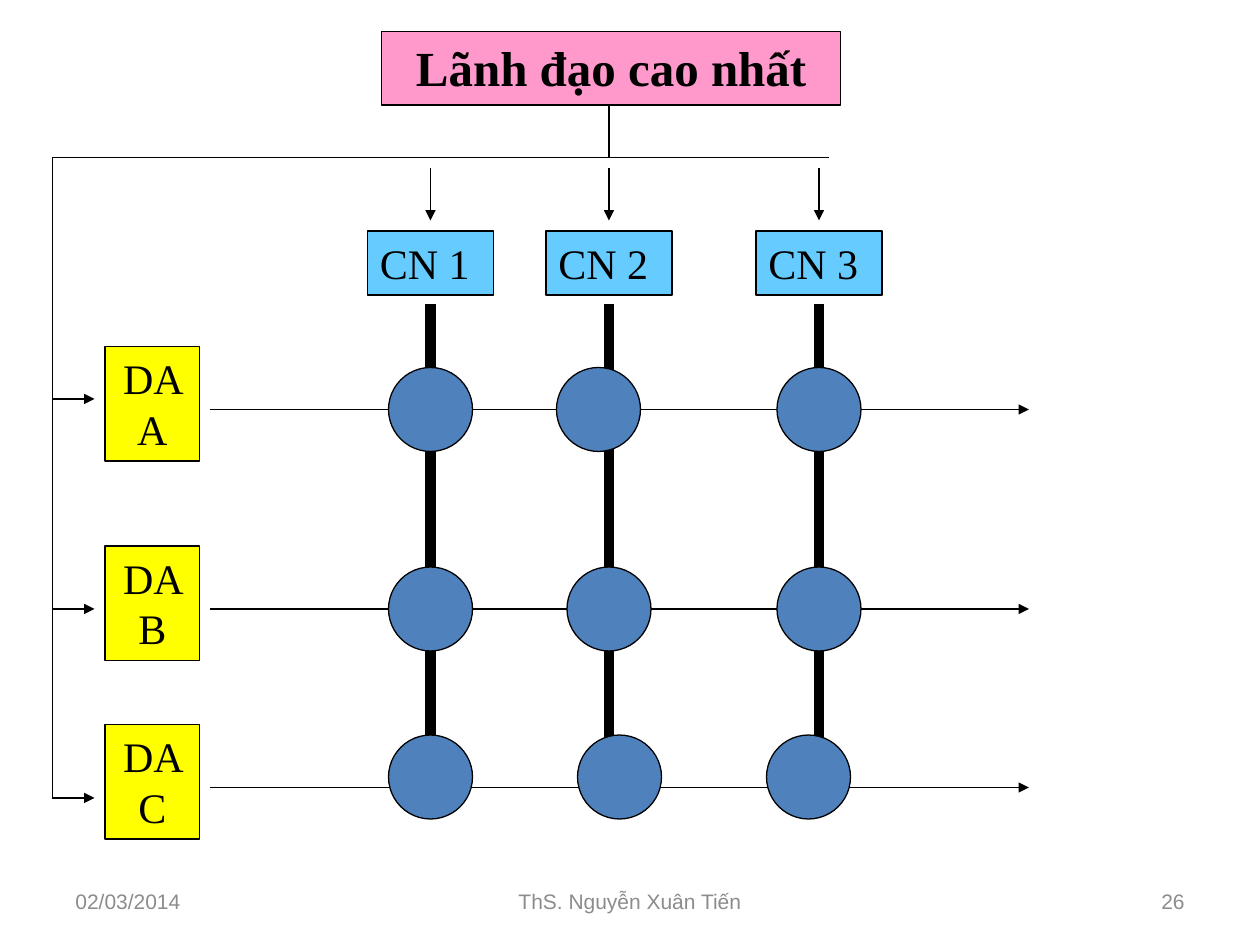
from dataclasses import dataclass

from lxml import etree
from pptx import Presentation, util as u
from pptx.dml.color import RGBColor
from pptx.enum import shapes, text
from pptx.oxml.ns import qn


@dataclass(frozen=True)
class Theme:
    ink: str = "000000"
    leader: str = "FF99CC"
    function: str = "66CCFF"
    project: str = "FFFF00"
    node: str = "4F81BD"
    muted: str = "8C8C8C"
    serif: str = "Times New Roman"
    sans: str = "Arial"
    title_size: int = 28
    label_size: int = 24
    footer_size: int = 12
    thin: float = 0.75
    thick: float = 6


THEME = Theme()
LEFT, CENTER, RIGHT = (text.PP_ALIGN.LEFT, text.PP_ALIGN.CENTER, text.PP_ALIGN.RIGHT)

# Places are in grid cells, twelve to the inch.
LEADER = "Lãnh đạo cao nhất"
FUNCTIONS = [("CN 1", 41), ("CN 2", 58), ("CN 3", 78)]  # label, column
PROJECTS = [  # label, row, branch row, node row, node shift in each column
    ("DA A", 39, 38, 39, (0, -1, 0)),
    ("DA B", 58, 58, 58, (0, 0, 0)),
    ("DA C", 75, 76, 74, (0, 1, -1)),
]
TRUNK = [(58, 10, 58, 15), (5, 15, 79, 15), (5, 15, 5, 76)]
FOOTERS = [  # text, left, width, alignment
    ("02/03/2014", 6, 28, LEFT),
    ("ThS. Nguyễn Xuân Tiến", 41, 38, CENTER),
    ("26", 86, 28, RIGHT),
]
NODE_SIZE = 8


def cells(*counts):
    return [u.Inches(count / 12) for count in counts]


def paint(shape, fill):
    shape.shadow.inherit = False
    shape.fill.solid()
    shape.fill.fore_color.rgb = RGBColor.from_string(fill)
    shape.line.color.rgb = RGBColor.from_string(THEME.ink)
    shape.line.width = u.Pt(THEME.thin)


def write(shape, words, size, align, font=THEME.serif, color=THEME.ink,
          bold=False, anchor=text.MSO_ANCHOR.TOP):
    frame = shape.text_frame
    frame.word_wrap = True
    frame.vertical_anchor = anchor
    paragraph = frame.paragraphs[0]
    paragraph.alignment = align
    run = paragraph.add_run()
    run.text = words
    run.font.name = font
    run.font.size = u.Pt(size)
    run.font.bold = bold
    run.font.color.rgb = RGBColor.from_string(color)


def add_label(slide, words, place, fill, align):
    label = slide.shapes.add_shape(shapes.MSO_SHAPE.RECTANGLE, *cells(*place))
    paint(label, fill)
    write(label, words, THEME.label_size, align)
    label.text_frame.auto_size = text.MSO_AUTO_SIZE.SHAPE_TO_FIT_TEXT


def add_line(slide, ends, width=THEME.thin, arrow=False):
    line = slide.shapes.add_connector(shapes.MSO_CONNECTOR.STRAIGHT, *cells(*ends))
    line.line.color.rgb = RGBColor.from_string(THEME.ink)
    line.line.width = u.Pt(width)
    if arrow:
        etree.SubElement(line.line._get_or_add_ln(), qn("a:tailEnd"), type="triangle")
    etree.SubElement(line._element.spPr, qn("a:effectLst"))


def add_leader(slide):
    leader = slide.shapes.title
    leader.left, leader.top, leader.width, leader.height = cells(36.35, 3, 43.7, 7)
    paint(leader, THEME.leader)
    write(leader, LEADER, THEME.title_size, CENTER, bold=True)
    leader.text_frame.auto_size = text.MSO_AUTO_SIZE.NONE


def add_matrix(slide):
    for name, column in FUNCTIONS:
        add_label(slide, name, (column - 6, 22, 12, 6.1), THEME.function, LEFT)
        add_line(slide, (column, 16, column, 21), arrow=True)
    for name, row, branch, _, _ in PROJECTS:
        add_label(slide, name, (10, row - 6, 9, 10.9), THEME.project, CENTER)
        add_line(slide, (5, branch, 9, branch), arrow=True)
        add_line(slide, (20, row, 98, row), arrow=True)
    for _, column in FUNCTIONS:
        add_line(slide, (column, 29, column, 75), width=THEME.thick)
    for _, _, _, node_row, shifts in PROJECTS:
        for (_, column), shift in zip(FUNCTIONS, shifts):
            corner = (column + shift - NODE_SIZE / 2, node_row - NODE_SIZE / 2)
            node = slide.shapes.add_shape(
                shapes.MSO_SHAPE.OVAL, *cells(*corner, NODE_SIZE, NODE_SIZE))
            paint(node, THEME.node)


def add_footers(slide):
    for words, left, width, align in FOOTERS:
        footer = slide.shapes.add_textbox(*cells(left, 83.4, width, 4.8))
        write(footer, words, THEME.footer_size, align, THEME.sans, THEME.muted,
              anchor=text.MSO_ANCHOR.MIDDLE)


def main():
    deck = Presentation()
    deck.slide_width, deck.slide_height = u.Inches(10), u.Inches(7.5)
    slide = deck.slides.add_slide(deck.slide_layouts.get_by_name("Title Only"))
    add_footers(slide)
    add_leader(slide)
    add_matrix(slide)
    for ends in TRUNK:
        add_line(slide, ends)
    deck.save("out.pptx")


if __name__ == "__main__":
    main()
